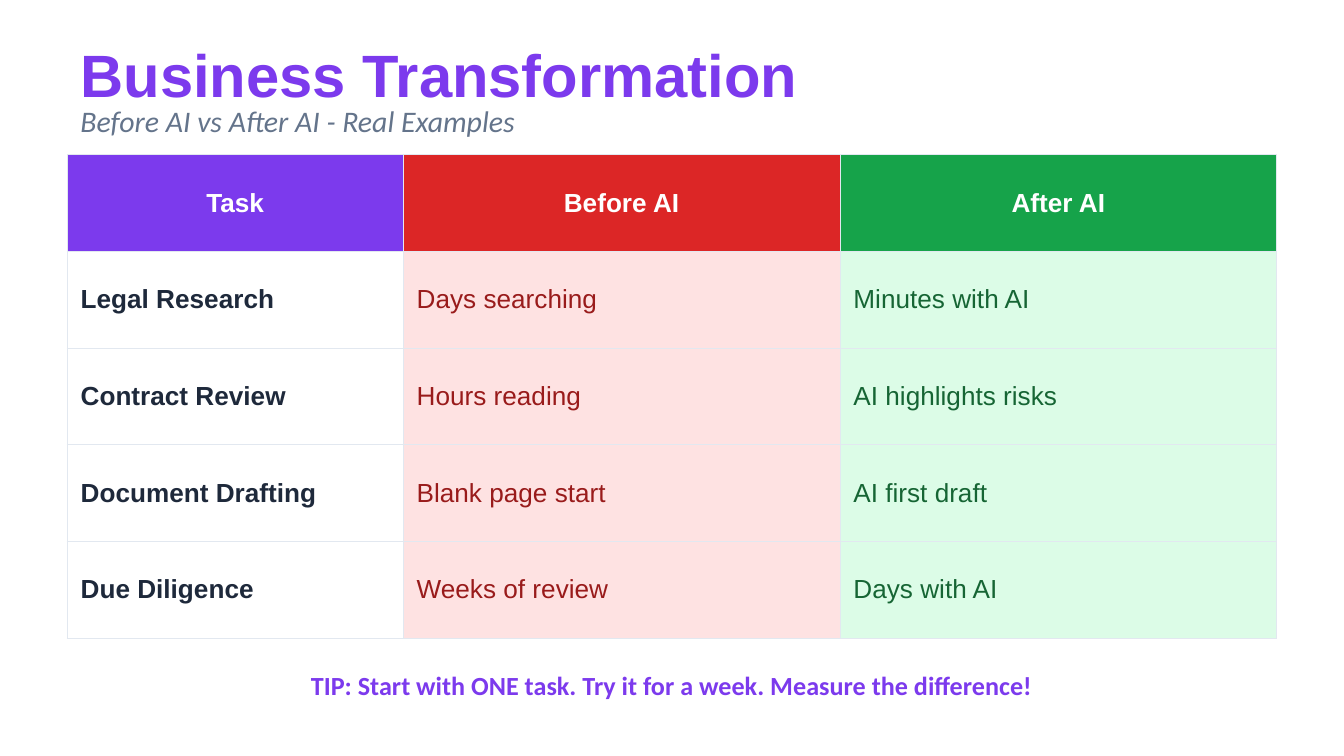
from lxml.etree import SubElement
from pptx import Presentation
from pptx.dml.color import RGBColor
from pptx.enum.text import MSO_ANCHOR as Anchor, MSO_AUTO_SIZE as AutoSize, PP_ALIGN as Align
from pptx.oxml.ns import qn
from pptx.util import Inches, Pt

COLORS = {
    "purple": "7C3AED", "red": "DC2626", "green": "16A34A",
    "white": "FFFFFF", "slate": "64748B", "ink": "1E293B",
    "dark_red": "991B1B", "dark_green": "166534",
    "pale_red": "FEE2E2", "pale_green": "DCFCE7", "border": "E2E8F0",
}
# Header fill, body fill, body text colour, body bold, width
COLUMNS = [
    ("purple", None, "ink", True, 2.5),
    ("red", "pale_red", "dark_red", False, 3.25),
    ("green", "pale_green", "dark_green", False, 3.25),
]
ROWS = [
    ("Task", "Before AI", "After AI"),
    ("Legal Research", "Days searching", "Minutes with AI"),
    ("Contract Review", "Hours reading", "AI highlights risks"),
    ("Document Drafting", "Blank page start", "AI first draft"),
    ("Due Diligence", "Weeks of review", "Days with AI"),
]
SLIDE_WIDTH = 10
SLIDE_HEIGHT = SLIDE_WIDTH * 9 / 16
LEFT, WIDTH = 0.5, 9
ROW_HEIGHT = 0.72


def rgb(name):
    return RGBColor.from_string(COLORS[name])


def write(tf, text, size=14, font="Arial", color="ink", bold=False, italic=False, align=Align.LEFT):
    p = tf.paragraphs[0]
    p.alignment = align
    r = p.add_run()
    r.text = text
    r.font.size = Pt(size)
    r.font.name = font
    r.font.bold = bold
    r.font.italic = italic
    r.font.color.rgb = rgb(color)


def add_title(slide, text, top, height):
    sp = slide.shapes.title
    sp.left, sp.top, sp.width, sp.height = map(Inches, (LEFT, top, WIDTH, height))
    tf = sp.text_frame
    tf.auto_size = AutoSize.NONE
    tf.vertical_anchor = Anchor.MIDDLE
    write(tf, text, size=32, color="purple", bold=True)


def add_text(slide, text, top, height, **fmt):
    sp = slide.shapes.add_textbox(*map(Inches, (LEFT, top, WIDTH, height)))
    tf = sp.text_frame
    tf.word_wrap = True
    tf.vertical_anchor = Anchor.MIDDLE
    write(tf, text, **fmt)


def set_borders(cell):
    """Draw a thin line on all four sides; call before setting the fill."""
    tc_pr = cell._tc.get_or_add_tcPr()
    for side in ("lnL", "lnR", "lnT", "lnB"):
        ln = SubElement(tc_pr, qn(f"a:{side}"), w=str(Pt(0.5)))
        fill = SubElement(ln, qn("a:solidFill"))
        SubElement(fill, qn("a:srgbClr"), val=COLORS["border"])


def fill_cell(cell, color):
    if color is None:
        cell.fill.background()
    else:
        cell.fill.solid()
        cell.fill.fore_color.rgb = rgb(color)


def add_comparison(slide, top):
    table = slide.shapes.add_table(
        len(ROWS), len(COLUMNS), Inches(LEFT), Inches(top),
        Inches(WIDTH), Inches(ROW_HEIGHT * len(ROWS))).table
    table.horz_banding = False
    for row in table.rows:
        row.height = Inches(ROW_HEIGHT)
    for j, (head_fill, body_fill, color, bold, width) in enumerate(COLUMNS):
        table.columns[j].width = Inches(width)
        for i, texts in enumerate(ROWS):
            cell = table.cell(i, j)
            cell.vertical_anchor = Anchor.MIDDLE
            set_borders(cell)
            if i == 0:
                fill_cell(cell, head_fill)
                write(cell.text_frame, texts[j], color="white", bold=True, align=Align.CENTER)
            else:
                fill_cell(cell, body_fill)
                write(cell.text_frame, texts[j], color=color, bold=bold)


def main():
    prs = Presentation()
    prs.slide_width, prs.slide_height = Inches(SLIDE_WIDTH), Inches(SLIDE_HEIGHT)
    slide = prs.slides.add_slide(prs.slide_layouts.get_by_name("Title Only"))
    slide.background.fill.solid()
    slide.background.fill.fore_color.rgb = rgb("white")

    add_title(slide, "Business Transformation", 0.3, 0.5)
    add_text(slide, "Before AI vs After AI - Real Examples", 0.75, 0.3,
             size=16, font="Calibri", color="slate", italic=True)
    add_comparison(slide, 1.15)
    add_text(slide, "TIP: Start with ONE task. Try it for a week. Measure the difference!", 4.9, 0.4,
             font="Calibri", color="purple", bold=True, align=Align.CENTER)
    prs.save("out.pptx")


if __name__ == "__main__":
    main()
